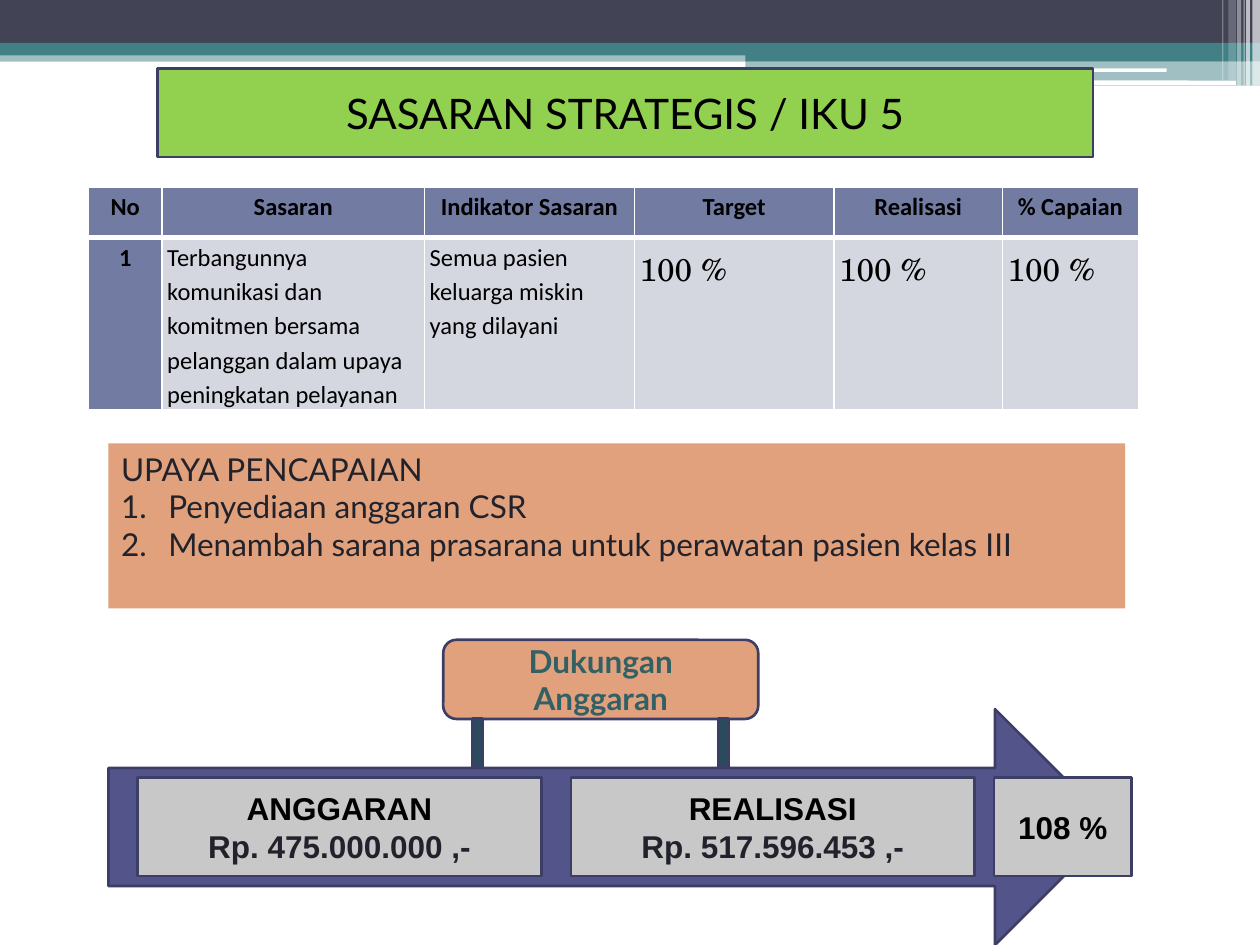
import dataclasses

import pptx
import pptx.dml.color
import pptx.enum.shapes
import pptx.enum.text
import pptx.oxml
import pptx.oxml.ns
import pptx.util

Pt = pptx.util.Pt
qn = pptx.oxml.ns.qn
SHAPE = pptx.enum.shapes.MSO_SHAPE
ALIGN = pptx.enum.text.PP_ALIGN
ANCHOR = pptx.enum.text.MSO_ANCHOR
NS = 'xmlns:a="http://schemas.openxmlformats.org/drawingml/2006/main"'

INK, DARK, LINE = "000000", "21222B", "3D3E66"
TEAL, WHITE, PEACH, GREY = "438086", "FFFFFF", "E1A17C", "C8C8C8"
HEAD, CELL = "727CA3", "D5D7E0"


@dataclasses.dataclass
class Box:
    x: float
    y: float
    w: float
    h: float
    fill: str
    alpha: int = 100
    kind: int = SHAPE.RECTANGLE
    line: str = ""


@dataclasses.dataclass
class Line:
    text: str
    size: float = 18
    font: str = "Lato"
    color: str = INK
    bold: bool = False
    align: int = ALIGN.CENTER


def rgb(color: str):
    return pptx.dml.color.RGBColor.from_string(color)


def xml(text: str):
    return pptx.oxml.parse_xml(text)


def paint(sp, box: Box) -> None:
    """Apply the fill, transparency and outline of a box."""
    sp.fill.solid()
    sp.fill.fore_color.rgb = rgb(box.fill)
    if box.alpha < 100:
        clr = next(sp.element.spPr.iter(qn("a:srgbClr")))
        clr.append(xml(f'<a:alpha {NS} val="{box.alpha * 1000}"/>'))
    if box.line:
        sp.line.color.rgb = rgb(box.line)
        sp.line.width = Pt(1.5)
    else:
        sp.line.fill.background()


def write(tf, lines: list[Line], **spacing) -> None:
    """Fill a text frame with one paragraph per line."""
    for i, line in enumerate(lines):
        p = tf.paragraphs[0] if i == 0 else tf.add_paragraph()
        for name, value in {"alignment": line.align, **spacing}.items():
            setattr(p, name, value)
        r = p.add_run()
        r.text = line.text
        font = {"size": Pt(line.size), "name": line.font, "bold": line.bold}
        for name, value in font.items():
            setattr(r.font, name, value)
        r.font.color.rgb = rgb(line.color)


def draw(s, box: Box, lines: list[Line] = ()):
    sp = s.shapes.add_shape(box.kind, Pt(box.x), Pt(box.y), Pt(box.w), Pt(box.h))
    sp.shadow.inherit = False
    paint(sp, box)
    if lines:
        sp.text_frame.word_wrap = True
        sp.text_frame.vertical_anchor = ANCHOR.MIDDLE
        write(sp.text_frame, lines)
    return sp


def place(sp, box: Box, anchor: int) -> None:
    """Move a placeholder to the box and format it like the box."""
    places = {"left": box.x, "top": box.y, "width": box.w, "height": box.h}
    for name, value in places.items():
        setattr(sp, name, Pt(value))
    paint(sp, box)
    tf = sp.text_frame
    tf.word_wrap = True
    tf.auto_size = pptx.enum.text.MSO_AUTO_SIZE.NONE
    tf.vertical_anchor = anchor


def draw_bands(s) -> None:
    bands = [
        Box(0, 28.8, 720, 6.5, TEAL, 50),
        Box(0, 0, 720, 24.5, "424456"),
        Box(0, 24.5, 720, 7.2, TEAL),
        Box(426, 28, 294, 7, TEAL),
        Box(426, 34.6, 294, 14.4, TEAL, 50),
        Box(425.5, 39, 241.2, 2, WHITE, kind=SHAPE.ROUNDED_RECTANGLE),
        Box(580.3, 46, 126, 2.7, WHITE, kind=SHAPE.ROUNDED_RECTANGLE),
    ]
    stripes = [(715.7, 4.3, 49, 65), (712.1, 2.2, 49, 65), (710.6, 0.7, 49, 60),
               (707, 2.2, 49, 40), (702, 4.3, 46, 20), (698.4, 0.7, 46, 30)]
    bands += [Box(x, 0, w, h, WHITE, alpha) for x, w, h, alpha in stripes]
    for band in bands:
        draw(s, band)


def draw_title(s) -> None:
    sp = s.shapes.title
    sp.element.getparent().append(sp.element)
    place(sp, Box(90, 39.3, 534.5, 50.5, "92D050", line=LINE), ANCHOR.MIDDLE)
    sp.element.spPr.find(qn("a:xfrm")).addnext(
        xml(f'<a:prstGeom {NS} prst="round2DiagRect"><a:avLst/></a:prstGeom>'))
    write(sp.text_frame, [Line("SASARAN STRATEGIS / IKU 5", 24)])


def draw_efforts(s) -> None:
    sp = s.placeholders[1]
    place(sp, Box(62, 253.3, 581, 94.3, PEACH), ANCHOR.TOP)
    texts = ["UPAYA PENCAPAIAN", "Penyediaan anggaran CSR",
             "Menambah sarana prasarana untuk perawatan pasien kelas III"]
    write(sp.text_frame, [Line(t, color=DARK, align=ALIGN.LEFT) for t in texts],
          space_before=Pt(0))
    for i, p in enumerate(sp.text_frame.paragraphs):
        pPr = p._p.get_or_add_pPr()
        indent = Pt(27) if i else 0
        pPr.set("marL", str(indent))
        pPr.set("indent", str(-indent))
        bullet = 'buAutoNum {} type="arabicPeriod"' if i else "buNone {}"
        pPr.append(xml(f"<a:{bullet.format(NS)}/>"))


def format_cell(cell, line: Line, fill: str, borders: dict[str, float]) -> None:
    insets = {"margin_left": 3, "margin_right": 3, "margin_top": 0.7, "margin_bottom": 0}
    for name, value in insets.items():
        setattr(cell, name, Pt(value))
    cell.fill.solid()
    cell.fill.fore_color.rgb = rgb(fill)
    for i, (side, width) in enumerate(borders.items()):
        cell._tc.get_or_add_tcPr().insert(i, xml(
            f'<a:ln{side} {NS} w="{Pt(width)}"><a:solidFill>'
            f'<a:srgbClr val="{WHITE}"/></a:solidFill></a:ln{side}>'))
    write(cell.text_frame, [line], line_spacing=1.15, space_after=Pt(10))


def draw_table(s) -> None:
    widths = [42, 150, 120, 114, 96.3, 77.7]
    heights = [28.8, 97.2]
    heads = ["No", "Sasaran", "Indikator Sasaran", "Target", "Realisasi", "% Capaian"]
    goal = ("Terbangunnya komunikasi dan komitmen bersama pelanggan "
            "dalam upaya peningkatan pelayanan")
    values = ["1", goal, "Semua pasien keluarga miskin yang dilayani"] + ["100 %"] * 3
    table = s.shapes.add_table(2, 6, Pt(50.6), Pt(106.8),
                               Pt(sum(widths)), Pt(sum(heights))).table
    table.first_row = table.horz_banding = False
    for col, width in zip(table.columns, widths):
        col.width = Pt(width)
    for row, height in zip(table.rows, heights):
        row.height = Pt(height)
    for r, texts in enumerate([heads, values]):
        borders = {"L": 1, "R": 1, "T": 3 if r else 1, "B": 1 if r else 3}
        for c, text in enumerate(texts):
            if r == 0 or c == 0:
                line, fill = Line(text, 14, "Calibri", bold=True), HEAD
            elif c < 3:
                line, fill = Line(text, 14, "Calibri", align=ALIGN.LEFT), CELL
            else:
                line, fill = Line(text, 18, "TeX Gyre Schola", align=ALIGN.LEFT), CELL
            format_cell(table.cell(r, c), line, fill, borders)


def draw_budget(s) -> None:
    draw(s, Box(253.3, 365.6, 180, 45.2, PEACH, kind=SHAPE.FLOWCHART_ALTERNATE_PROCESS,
                line=LINE), [Line("Dukungan Anggaran", color="326065", bold=True)])
    draw(s, Box(62, 405.2, 574, 134.8, "53548A", kind=SHAPE.RIGHT_ARROW, line=LINE))
    panels = [
        (78.7, 230.6, ["ANGGARAN", "Rp. 475.000.000 ,-"]),
        (326.3, 230.6, ["REALISASI", "Rp. 517.596.453 ,-"]),
        (568, 78.7, ["108 %"]),
    ]
    for x, w, texts in panels:
        lines = [Line(t, 18, "Arial", color, True) for t, color in zip(texts, (INK, DARK))]
        draw(s, Box(x, 444.4, w, 56.2, GREY, line=LINE), lines)
    for x in (270, 410.4):
        draw(s, Box(x, 410.6, 5.8, 28, "2B4A5E", line=LINE))


def main() -> None:
    prs = pptx.Presentation()
    prs.slide_width, prs.slide_height = Pt(720), Pt(540)
    s = prs.slides.add_slide(prs.slide_layouts[1])
    draw_bands(s)
    draw_title(s)
    draw_table(s)
    draw_efforts(s)
    draw_budget(s)
    prs.save("out.pptx")


if __name__ == "__main__":
    main()
